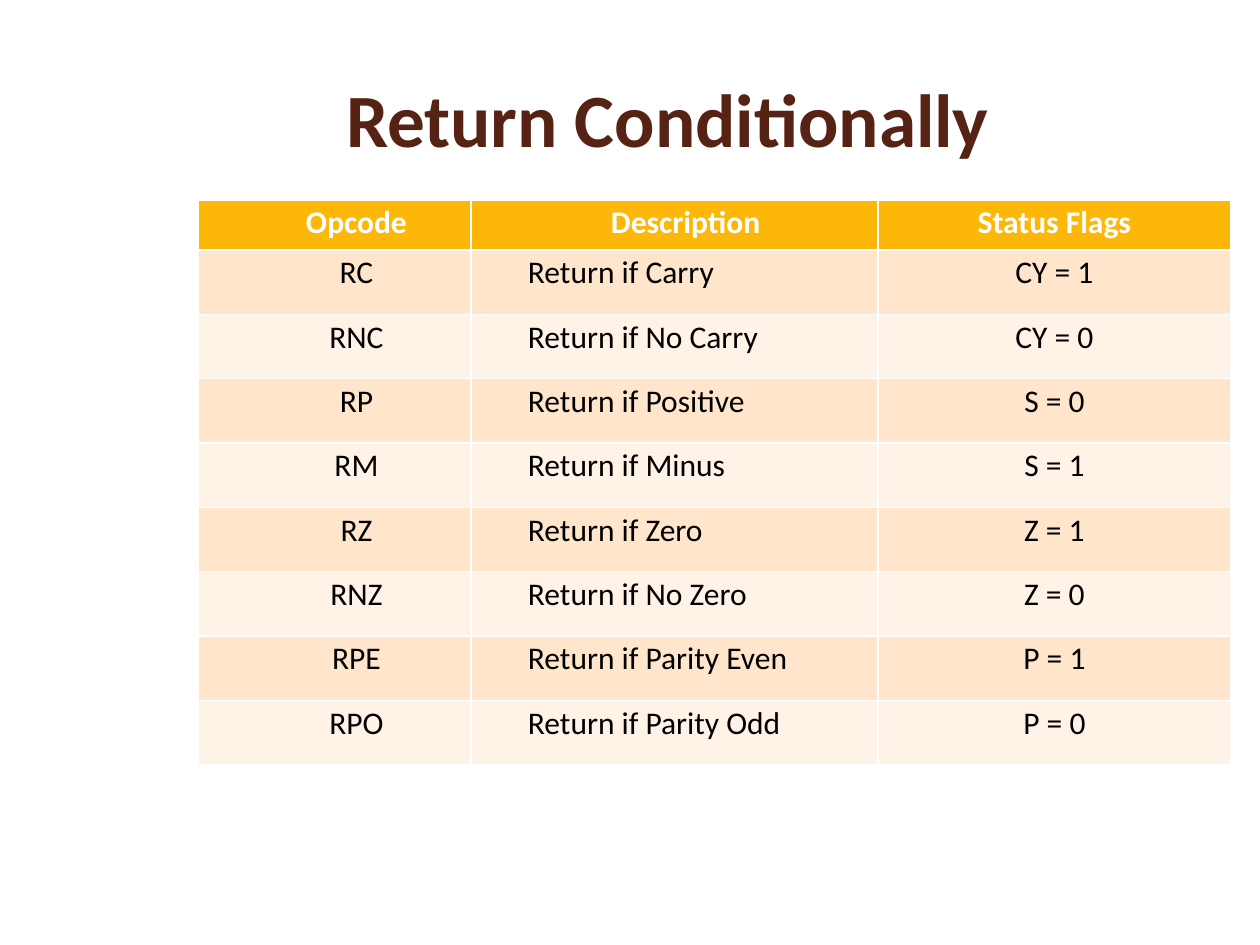
from dataclasses import dataclass

from pptx import Presentation, util as u
from pptx.dml.color import RGBColor
from pptx.enum import text

PX_PER_INCH = 126


def px(n):
    return u.Emu(round(n * 914400 / PX_PER_INCH))


@dataclass(frozen=True)
class Theme:
    font: str = "Calibri"
    title_size: int = 43
    cell_size: int = 18
    title: str = "562213"
    header_text: str = "FFFFFF"
    body_text: str = "000000"
    header_fill: str = "FDB709"
    bands: tuple = ("FFE5CC", "FFF2E6")


@dataclass(frozen=True)
class Column:
    heading: str
    width: int
    align: text.PP_ALIGN
    heading_indent: int
    indent: int


class SlideBuilder:
    def __init__(self, slide, theme):
        self.s = slide
        self.theme = theme

    def add_run(self, p, words, size, color, bold=False):
        r = p.add_run()
        r.text = words
        r.font.name = self.theme.font
        r.font.size = u.Pt(size)
        r.font.bold = bold
        r.font.color.rgb = RGBColor.from_string(color)

    def title(self, words, left, top, width, height):
        sp = self.s.shapes.title
        sp.left, sp.top, sp.width, sp.height = map(px, (left, top, width, height))
        tf = sp.text_frame
        tf.margin_left = tf.margin_right = tf.margin_bottom = 0
        tf.margin_top = px(3)
        tf.vertical_anchor = text.MSO_ANCHOR.TOP
        tf.auto_size = text.MSO_AUTO_SIZE.NONE
        p = tf.paragraphs[0]
        p.alignment = text.PP_ALIGN.LEFT
        self.add_run(p, words, self.theme.title_size, self.theme.title, bold=True)

    def cell(self, cell, words, fill, color, align, indent, bold=False):
        cell.fill.solid()
        cell.fill.fore_color.rgb = RGBColor.from_string(fill)
        cell.margin_left = px(indent)
        cell.margin_right = cell.margin_bottom = 0
        cell.margin_top = px(4)
        cell.vertical_anchor = text.MSO_ANCHOR.TOP
        p = cell.text_frame.paragraphs[0]
        p.alignment = align
        self.add_run(p, words, self.theme.cell_size, color, bold)

    def table(self, columns, rows, left, top, height, header_height):
        t = self.theme
        width = sum(c.width for c in columns)
        table = self.s.shapes.add_table(
            len(rows) + 1, len(columns), px(left), px(top), px(width), px(height)
        ).table
        row_height = (height - header_height) / len(rows)
        for i, row in enumerate(table.rows):
            row.height = px(row_height if i else header_height)
        for j, c in enumerate(columns):
            table.columns[j].width = px(c.width)
            self.cell(table.cell(0, j), c.heading, t.header_fill, t.header_text,
                      c.align, c.heading_indent, bold=True)
            for i, row in enumerate(rows):
                self.cell(table.cell(i + 1, j), row[j], t.bands[i % 2],
                          t.body_text, c.align, c.indent)


COLUMNS = [
    Column("Opcode", 273, text.PP_ALIGN.CENTER, 44, 44),
    Column("Description", 407, text.PP_ALIGN.LEFT, 140, 57),
    Column("Status Flags", 353, text.PP_ALIGN.CENTER, 0, 0),
]
RETURNS = [
    ("RC", "Return if Carry", "CY = 1"),
    ("RNC", "Return if No Carry", "CY = 0"),
    ("RP", "Return if Positive", "S = 0"),
    ("RM", "Return if Minus", "S = 1"),
    ("RZ", "Return if Zero", "Z = 1"),
    ("RNZ", "Return if No Zero", "Z = 0"),
    ("RPE", "Return if Parity Even", "P = 1"),
    ("RPO", "Return if Parity Odd", "P = 0"),
]


def main():
    prs = Presentation()
    prs.slide_width, prs.slide_height = px(1260), px(945)
    title_only = prs.slide_layouts[5]
    b = SlideBuilder(prs.slides.add_slide(title_only), Theme())
    b.title("Return Conditionally", 346, 69, 737, 93)
    b.table(COLUMNS, RETURNS, left=198, top=200, height=565, header_height=50)
    prs.save("out.pptx")


if __name__ == "__main__":
    main()
